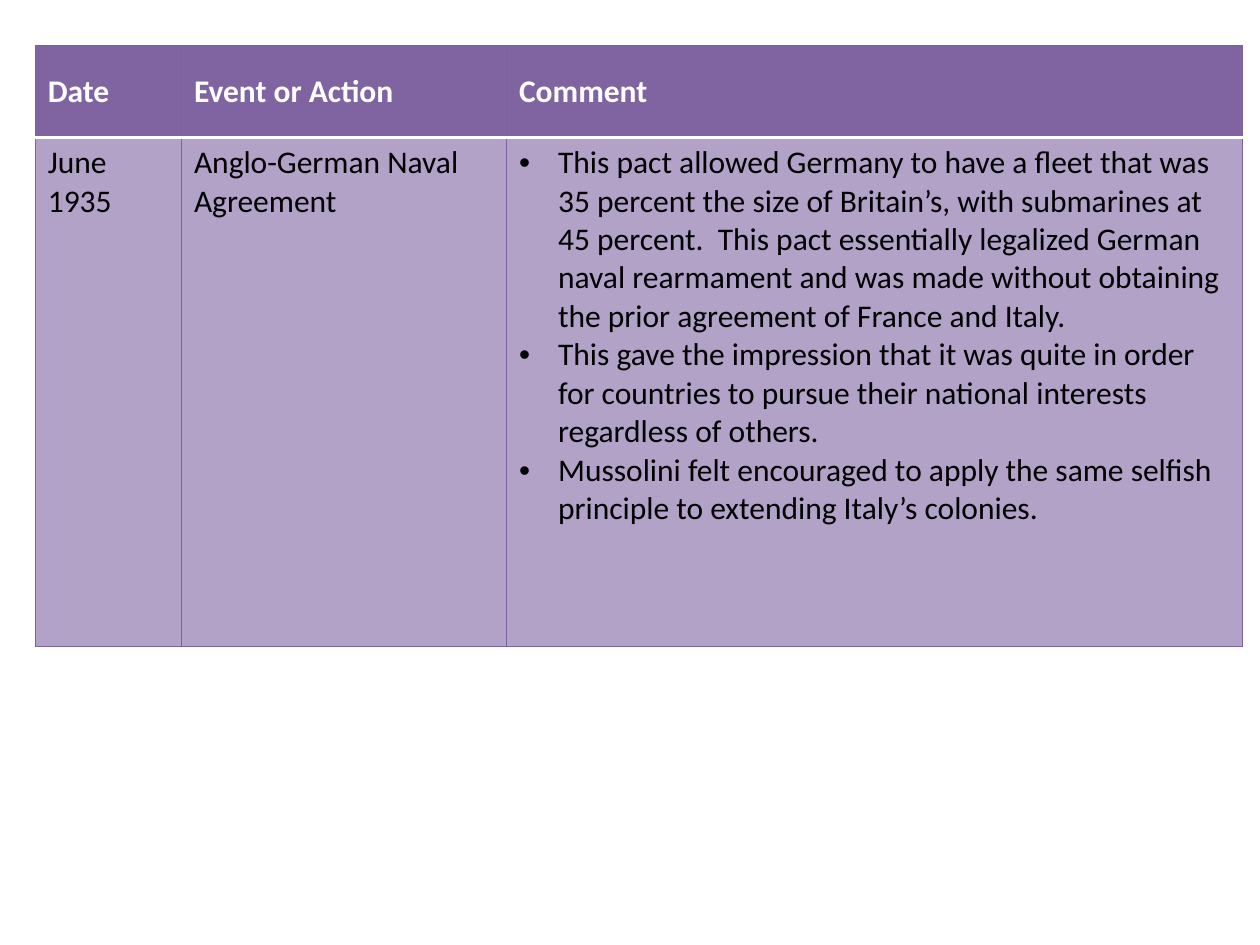
from lxml.etree import SubElement as Sub
from pptx import Presentation
from pptx.dml.color import RGBColor as RGB
from pptx.enum.text import MSO_ANCHOR as Anchor
from pptx.oxml.ns import qn
from pptx.util import Inches, Pt

COLORS = {"fill": "8064A2", "edge": "7D60A0", "white": "FFFFFF", "black": "000000"}
WIDTHS = (1.16, 2.58, 5.84)
HEIGHTS = (0.73, 4.04)
ROWS = (
    (["Date"], ["Event or Action"], ["Comment"]),
    (
        ["June 1935"],
        ["Anglo-German Naval Agreement"],
        [
            "This pact allowed Germany to have a fleet that was 35 percent the size of "
            "Britain’s, with submarines at 45 percent.  This pact essentially legalized "
            "German naval rearmament and was made without obtaining the prior agreement "
            "of France and Italy.",
            "This gave the impression that it was quite in order for countries to pursue "
            "their national interests regardless of others.",
            "Mussolini felt encouraged to apply the same selfish principle to extending "
            "Italy’s colonies.",
        ],
    ),
)


def add_edges(cell, head):
    """Draw the four borders, with a white rule between head and body."""
    props = cell._tc.get_or_add_tcPr()
    rule = "B" if head else "T"
    for spot, side in enumerate("LRTB"):
        color, width = ("white", 2) if side == rule else ("edge", 0.75)
        line = Sub(props, qn(f"a:ln{side}"), w=str(Pt(width)))
        Sub(Sub(line, qn("a:solidFill")), qn("a:srgbClr"), val=COLORS[color])
        props.insert(spot, line)


def add_bullet(para):
    """Give the paragraph a hanging round bullet."""
    props = para._p.get_or_add_pPr()
    indent = Inches(0.31)
    props.set("marL", str(indent))
    props.set("indent", str(-indent))
    Sub(props, qn("a:buFont"), typeface="Arial")
    Sub(props, qn("a:buChar"), char="•")


def fill_cell(cell, lines, head):
    """Write and format one cell."""
    cell.fill.solid()
    cell.fill.fore_color.rgb = RGB.from_string(COLORS["fill"])
    if not head:
        tint = cell._tc.tcPr.find(".//" + qn("a:srgbClr"))
        Sub(tint, qn("a:alpha"), val="60000")
    add_edges(cell, head)
    cell.vertical_anchor = Anchor.MIDDLE if head else Anchor.TOP
    cell.text = "\n".join(lines)
    for para in cell.text_frame.paragraphs:
        font = para.font
        font.name, font.size, font.bold = "Calibri", Pt(18), head
        font.color.rgb = RGB.from_string(COLORS["white" if head else "black"])
        if len(lines) > 1:
            add_bullet(para)


def add_events(slide, left, top):
    """Place the table of events at the given corner."""
    table = slide.shapes.add_table(
        len(ROWS), len(WIDTHS), left, top, Inches(sum(WIDTHS)), Inches(sum(HEIGHTS))
    ).table
    for col, width in zip(table.columns, WIDTHS):
        col.width = Inches(width)
    for num, (row, height) in enumerate(zip(table.rows, HEIGHTS)):
        row.height = Inches(height)
        for cell, lines in zip(row.cells, ROWS[num]):
            fill_cell(cell, lines, num == 0)


def main():
    """Build and save the slide."""
    deck = Presentation()
    deck.slide_width, deck.slide_height = Inches(10), Inches(7.5)
    slide = deck.slides.add_slide(deck.slide_layouts[6])
    add_events(slide, Inches(0.28), Inches(0.36))
    deck.save("out.pptx")


if __name__ == "__main__":
    main()
